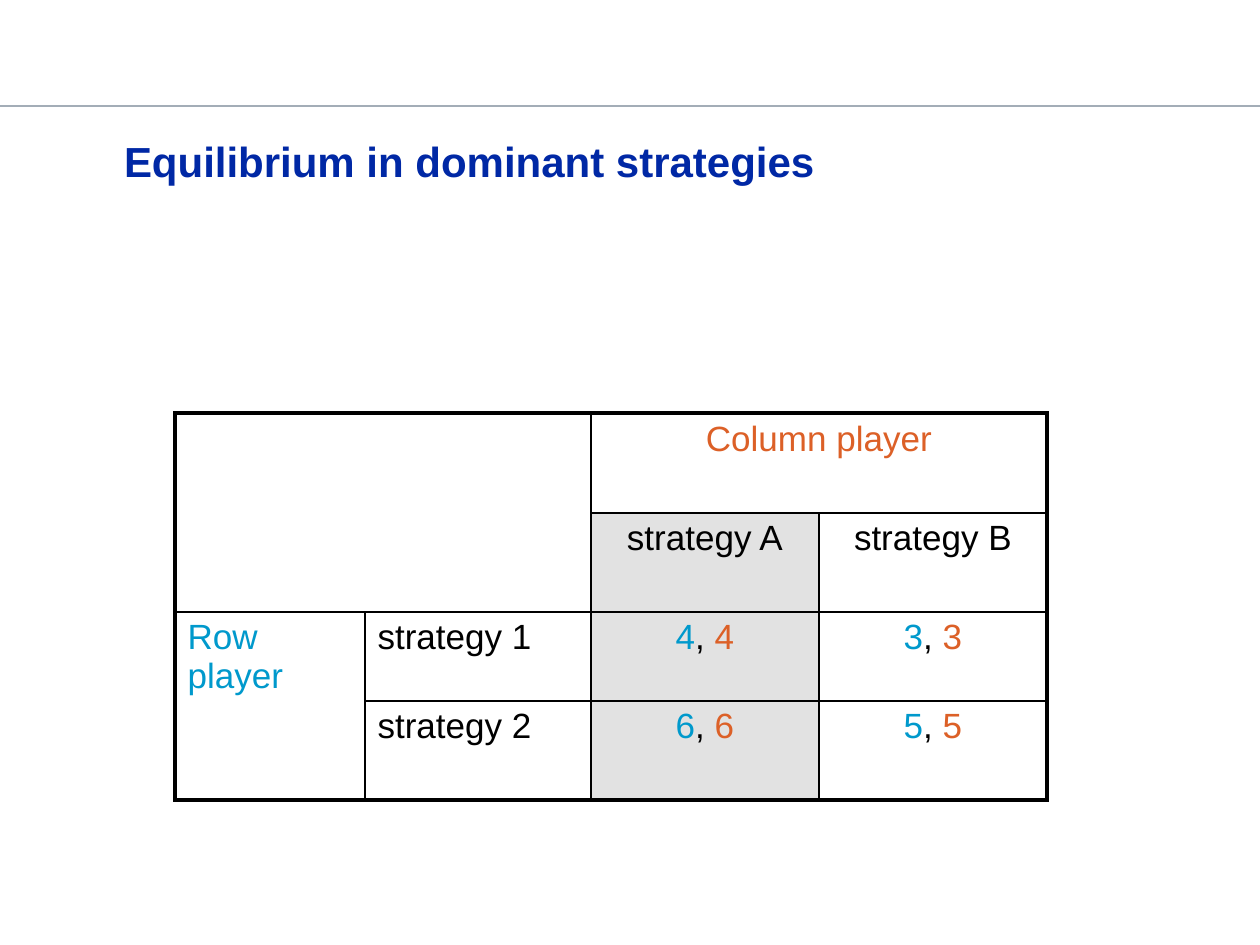
import pptx
import pptx.util
import pptx.dml.color
import pptx.enum.shapes
import pptx.enum.text
import pptx.oxml
from lxml import etree

THEME = {
    "font": "Arial", "title_pt": 24, "table_pt": 20,
    "title": "0028A5", "row": "0099CC", "column": "DC6027", "text": "000000",
    "rule": "A3ADB7", "border": "000000", "shade": "D9D9D9", "shade_alpha": 75,
    "rule_pt": 1.25, "thin_pt": 1, "thick_pt": 2.25,
}
SLIDE = (1260, 945)
RULE_Y = 106
TITLE = "Equilibrium in dominant strategies"
TITLE_BOX = (124, 125, 1012, 69)
TITLE_INSET = 10
TABLE_AT = (175, 413)
COLS = [190, 226, 228, 228]
ROWS = [100, 99, 89, 99]
SHADED_COL = 2
CENTERED_FROM = 2


def payoff(row, column):
    return [(row, "row"), (", ", "text"), (column, "column")]


# (row, column, rows spanned, columns spanned, runs)
REGIONS = [
    (0, 0, 2, 2, []),
    (0, 2, 1, 2, [("Column player", "column")]),
    (1, 2, 1, 1, [("strategy A", "text")]),
    (1, 3, 1, 1, [("strategy B", "text")]),
    (2, 0, 2, 1, [("Row player", "row")]),
    (2, 1, 1, 1, [("strategy 1", "text")]),
    (2, 2, 1, 1, payoff("4", "4")),
    (2, 3, 1, 1, payoff("3", "3")),
    (3, 1, 1, 1, [("strategy 2", "text")]),
    (3, 2, 1, 1, payoff("6", "6")),
    (3, 3, 1, 1, payoff("5", "5")),
]


def px(n):
    return pptx.util.Emu(round(n * 914400 / 126))


def rgb(name):
    return pptx.dml.color.RGBColor.from_string(THEME[name])


def write(tf, runs, size, bold=False, center=False):
    p = tf.paragraphs[0]
    align = pptx.enum.text.PP_ALIGN
    p.alignment = align.CENTER if center else align.LEFT
    p.font.size = pptx.util.Pt(THEME[size])
    for text, color in runs:
        r = p.add_run()
        r.text = text
        r.font.name = THEME["font"]
        r.font.size = pptx.util.Pt(THEME[size])
        r.font.bold = bold
        r.font.color.rgb = rgb(color)


def sub(parent, tag, **attrs):
    return etree.SubElement(parent, pptx.oxml.ns.qn(tag), **attrs)


def set_borders(cell, edges):
    """Put (side, points) borders ahead of the cell's fill."""
    tc_pr = cell._tc.get_or_add_tcPr()
    for i, (side, points) in enumerate(edges):
        ln = sub(tc_pr, "a:ln" + side, w=str(pptx.util.Pt(points)))
        sub(sub(ln, "a:solidFill"), "a:srgbClr", val=THEME["border"])
        tc_pr.insert(i, ln)


def fill_cell(cell, shaded):
    if not shaded:
        cell.fill.background()
        return
    cell.fill.solid()
    cell.fill.fore_color.rgb = rgb("shade")
    color = cell._tc.tcPr.find(".//" + pptx.oxml.ns.qn("a:srgbClr"))
    sub(color, "a:alpha", val=str(THEME["shade_alpha"] * 1000))


def add_rule(s):
    line = s.shapes.add_connector(pptx.enum.shapes.MSO_CONNECTOR.STRAIGHT,
                                  px(0), px(RULE_Y), px(SLIDE[0]), px(RULE_Y))
    line.line.color.rgb = rgb("rule")
    line.line.width = pptx.util.Pt(THEME["rule_pt"])
    sub(line._element.spPr, "a:effectLst")


def add_title(s):
    tf = s.shapes.add_textbox(*map(px, TITLE_BOX)).text_frame
    tf.word_wrap = True
    tf.margin_left = tf.margin_right = tf.margin_bottom = 0
    tf.margin_top = px(TITLE_INSET)
    write(tf, [(TITLE, "title")], "title_pt", bold=True)


def add_payoff_table(s):
    table = s.shapes.add_table(len(ROWS), len(COLS), *map(px, TABLE_AT),
                               px(sum(COLS)), px(sum(ROWS))).table
    table.first_row = table.horz_banding = False
    for col, width in zip(table.columns, COLS):
        col.width = px(width)
    for row, height in zip(table.rows, ROWS):
        row.height = px(height)

    for top, left, n_rows, n_cols, runs in REGIONS:
        bottom, right = top + n_rows - 1, left + n_cols - 1
        origin = table.cell(top, left)
        if n_rows * n_cols > 1:
            origin.merge(table.cell(bottom, right))
        write(origin.text_frame, runs, "table_pt", center=left >= CENTERED_FROM)
        outer = {"L": left == 0, "R": right == len(COLS) - 1,
                 "T": top == 0, "B": bottom == len(ROWS) - 1}
        for i in range(top, bottom + 1):
            for j in range(left, right + 1):
                cell = table.cell(i, j)
                fill_cell(cell, j == SHADED_COL and n_cols == 1)
                on_edge = {"L": j == left, "R": j == right,
                           "T": i == top, "B": i == bottom}
                is_origin = (i, j) == (top, left)
                set_borders(cell, [
                    (side, THEME["thick_pt" if thick else "thin_pt"])
                    for side, thick in outer.items()
                    if is_origin or on_edge[side]])


def main():
    prs = pptx.Presentation()
    prs.slide_width, prs.slide_height = map(px, SLIDE)
    s = prs.slides.add_slide(prs.slide_layouts[6])
    add_rule(s)
    add_payoff_table(s)
    add_title(s)
    prs.save("out.pptx")


if __name__ == "__main__":
    main()
